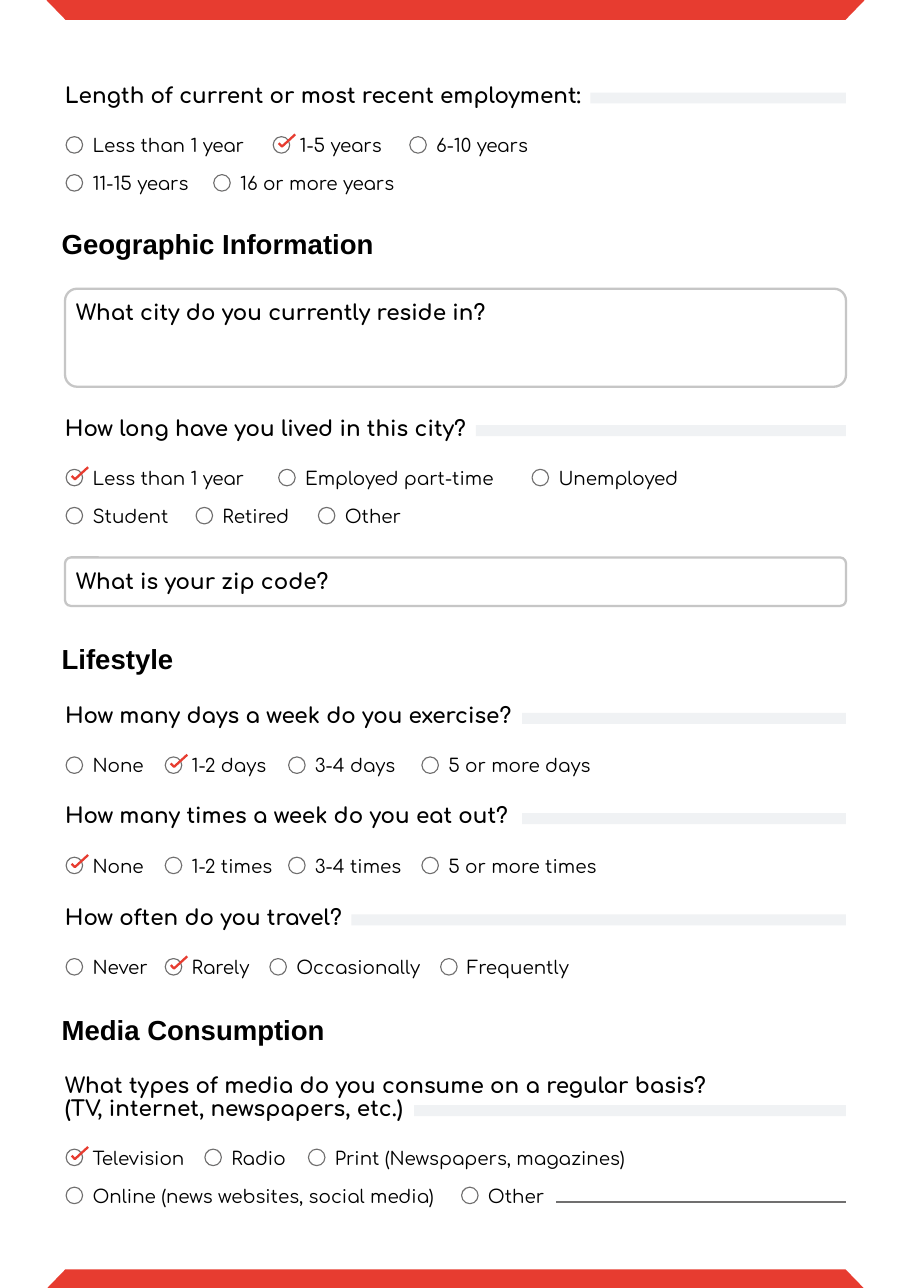
from lxml.etree import SubElement
from pptx import Presentation
from pptx.dml.color import RGBColor
from pptx.enum.shapes import MSO_CONNECTOR as Link, MSO_SHAPE as Kind
from pptx.enum.text import MSO_ANCHOR as Anchor, MSO_AUTO_SIZE as Auto, PP_ALIGN as Align
from pptx.oxml.ns import qn
from pptx.util import Inches, Pt

COLORS = {"red": "E73C30", "bar": "F0F2F4", "frame": "C6C6C6",
          "ring": "706F6F", "ink": "000000"}
LEFT, RIGHT = 0.59, 7.68
WIDE = RIGHT - LEFT


def color(name):
    return RGBColor.from_string(COLORS[name])


def place(item, box):
    item.left, item.top, item.width, item.height = [Inches(v) for v in box]


def style(shape, fill=None, line=None, width=0.75):
    shape.shadow.inherit = False
    if fill:
        shape.fill.solid()
        shape.fill.fore_color.rgb = color(fill)
    else:
        shape.fill.background()
    if line:
        shape.line.color.rgb = color(line)
        shape.line.width = Pt(width)
    else:
        shape.line.fill.background()


def draw(slide, kind, box, **look):
    shape = slide.shapes.add_shape(kind, *[Inches(v) for v in box])
    style(shape, **look)
    return shape


def write(slide, box, lines, size, bold=False, font="Comfortaa", item=None):
    item = item or slide.shapes.add_textbox(0, 0, 0, 0)
    place(item, box)
    frame = item.text_frame
    frame.word_wrap = True
    frame.auto_size = Auto.SHAPE_TO_FIT_TEXT
    frame.vertical_anchor = Anchor.TOP
    frame.margin_left = frame.margin_right = frame.margin_top = frame.margin_bottom = 0
    frame.text = lines
    for para in frame.paragraphs:
        para.alignment = Align.LEFT
        para.line_spacing = 0.9
        para.space_before = Pt(0)
        para.font.name, para.font.size, para.font.bold = font, Pt(size), bold
        para.font.color.rgb = color("ink")


def edge(slide, box, turn=0):
    """Red band at the top or bottom of the page."""
    band = draw(slide, Kind.TRAPEZOID, box, fill="red")
    band.adjustments[0] = 0.97
    band.rotation = turn


def heading(slide, top, text, item=None):
    write(slide, (0.56, top, 3.28, 0.27), text, 18, True, "Arial", item)


def field(slide, box, text):
    """Rounded answer box with its question inside."""
    x, y, w, h = box
    frame = draw(slide, Kind.ROUNDED_RECTANGLE, box, line="frame", width=1.5)
    frame.adjustments[0] = 0.123
    write(slide, (x + 0.1, y + 0.12, w - 0.2, 0.21), text, 14, True)


def tick(slide, x, y):
    spots = [(Inches(x + dx), Inches(y + dy))
             for dx, dy in ((0.2, -0.02), (0.08, 0.09), (0.05, 0.06))]
    pen = slide.shapes.build_freeform(*spots[0])
    pen.add_line_segments(spots[1:], close=False)
    style(pen.convert_to_shape(), line="red", width=1.5)


def choices(slide, box, row, chosen):
    """One row of options; each label runs to the next circle."""
    x, y, w = box
    ends = [spot for spot, _ in row[1:]] + [x + w]
    for (spot, label), end in zip(row, ends):
        draw(slide, Kind.OVAL, (spot, y, 0.15, 0.15), line="ring")
        start = spot + 0.24
        write(slide, (start, y, end - start, 0.18), label, 12)
        if label == chosen:
            tick(slide, spot, y)


def question(slide, box, text, bar, chosen, rows):
    """Question, grey bar up to the right edge, then rows of options."""
    x, y, w = box
    extra = text.count("\n")
    wide = w if extra else bar - x
    write(slide, (x, y, wide, 0.21 * (extra + 1)), text, 14, True)
    y += 0.2 * extra
    draw(slide, Kind.RECTANGLE, (bar, y + 0.07, x + w - bar, 0.1), fill="bar")
    for i, row in enumerate(rows):
        choices(slide, (x, y + 0.47 + 0.345 * i, w), row, chosen)


def blank(slide, x, y):
    """Line for a written answer."""
    rule = slide.shapes.add_connector(
        Link.STRAIGHT, Inches(x), Inches(y), Inches(RIGHT), Inches(y))
    rule.line.color.rgb = color("ring")
    rule.line.width = Pt(1.5)
    SubElement(rule._element.spPr, qn("a:effectLst"))


# Top, text, bar start, chosen option, rows of (circle left, label)
ASKED = [
    (0.77, "Length of current or most recent employment:", 5.36, "1-5 years",
     [[(0.6, "Less than 1 year"), (2.48, "1-5 years"), (3.72, "6-10 years")],
      [(0.6, "11-15 years"), (1.94, "16 or more years")]]),
    (3.79, "How long have you lived in this city?", 4.32, "Less than 1 year",
     [[(0.6, "Less than 1 year"), (2.53, "Employed part-time"), (4.83, "Unemployed")],
      [(0.6, "Student"), (1.78, "Retired"), (2.89, "Other")]]),
    (6.4, "How many days a week do you exercise?", 4.74, "1-2 days",
     [[(0.6, "None"), (1.5, "1-2 days"), (2.62, "3-4 days"), (3.83, "5 or more days")]]),
    (7.31, "How many times a week do you eat out?", 4.74, "None",
     [[(0.6, "None"), (1.5, "1-2 times"), (2.62, "3-4 times"), (3.83, "5 or more times")]]),
    (8.23, "How often do you travel?", 3.19, "Rarely",
     [[(0.6, "Never"), (1.5, "Rarely"), (2.45, "Occasionally"), (4, "Frequently")]]),
    (9.76, "What types of media do you consume on a regular basis?\n"
     "(TV, internet, newspapers, etc.)", 3.76, "Television",
     [[(0.6, "Television"), (1.86, "Radio"), (2.8, "Print (Newspapers, magazines)")],
      [(0.6, "Online (news websites, social media)"), (4.19, "Other")]]),
]


def main():
    deck = Presentation()
    deck.slide_width, deck.slide_height = Inches(8.27), Inches(11.69)
    slide = deck.slides.add_slide(deck.slide_layouts[5])

    # Page bands
    edge(slide, (0.42, 0, 7.43, 0.18), 180)
    edge(slide, (0.42, 11.52, 7.43, 0.18))

    # Section headings
    heading(slide, 2.09, "Geographic Information", slide.shapes.title)
    heading(slide, 5.86, "Lifestyle")
    heading(slide, 9.23, "Media Consumption")

    # Answer boxes
    field(slide, (LEFT, 2.62, WIDE, 0.89), "What city do you currently reside in?")
    field(slide, (LEFT, 5.06, WIDE, 0.44), "What is your zip code?")

    # Questions with options
    for top, *rest in ASKED:
        question(slide, (LEFT, top, WIDE), *rest)
    blank(slide, 5.05, 10.91)

    deck.save("out.pptx")


if __name__ == "__main__":
    main()
